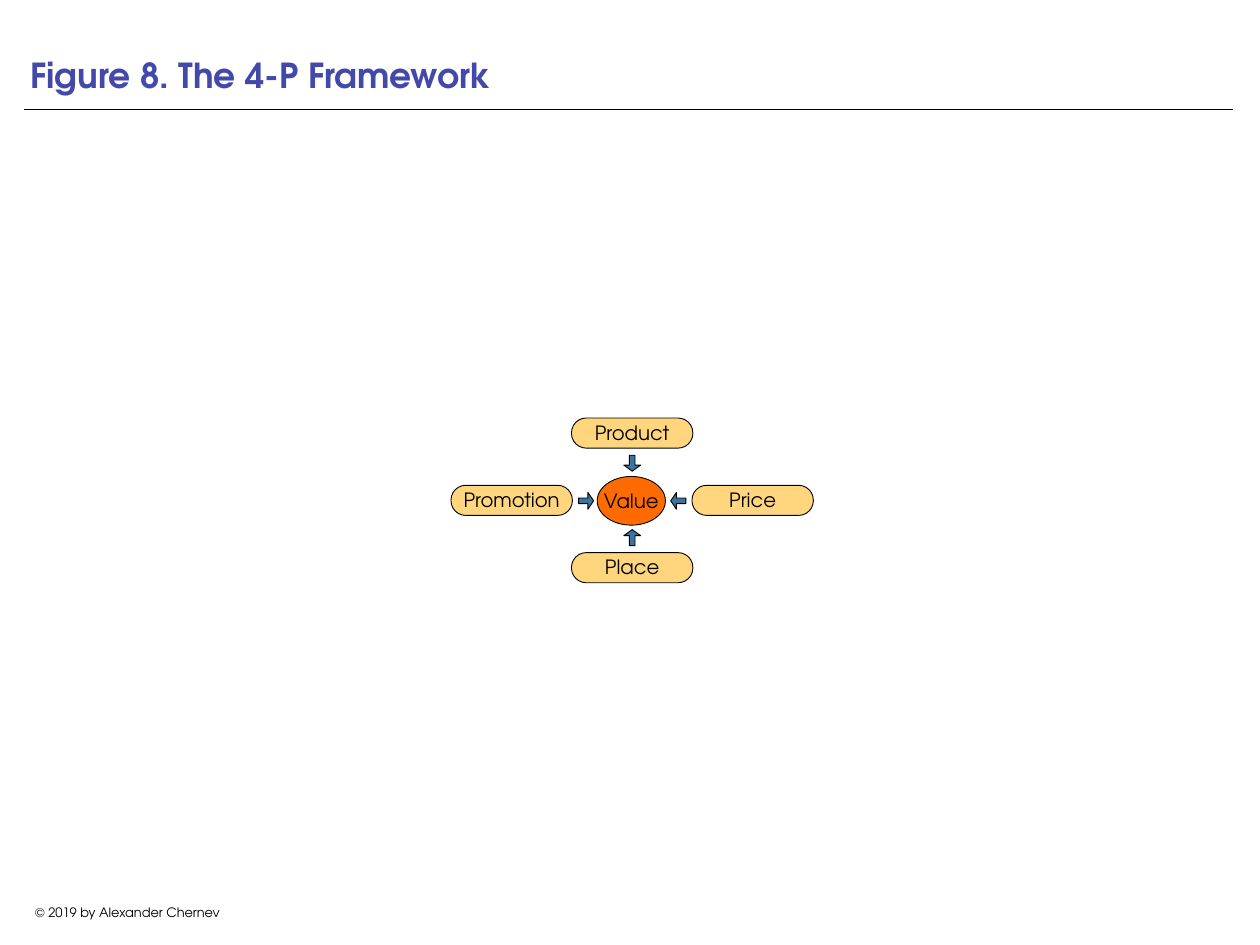
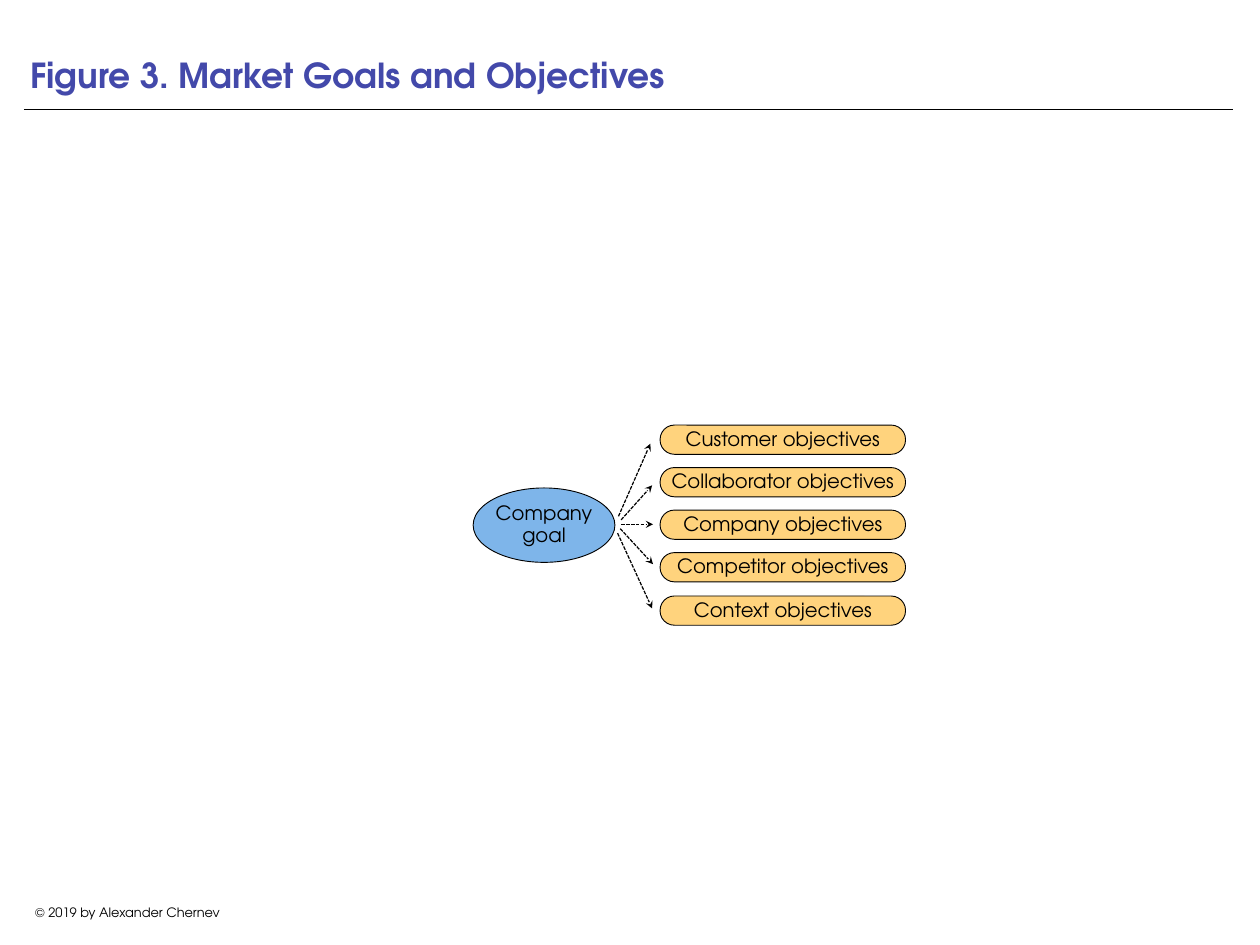
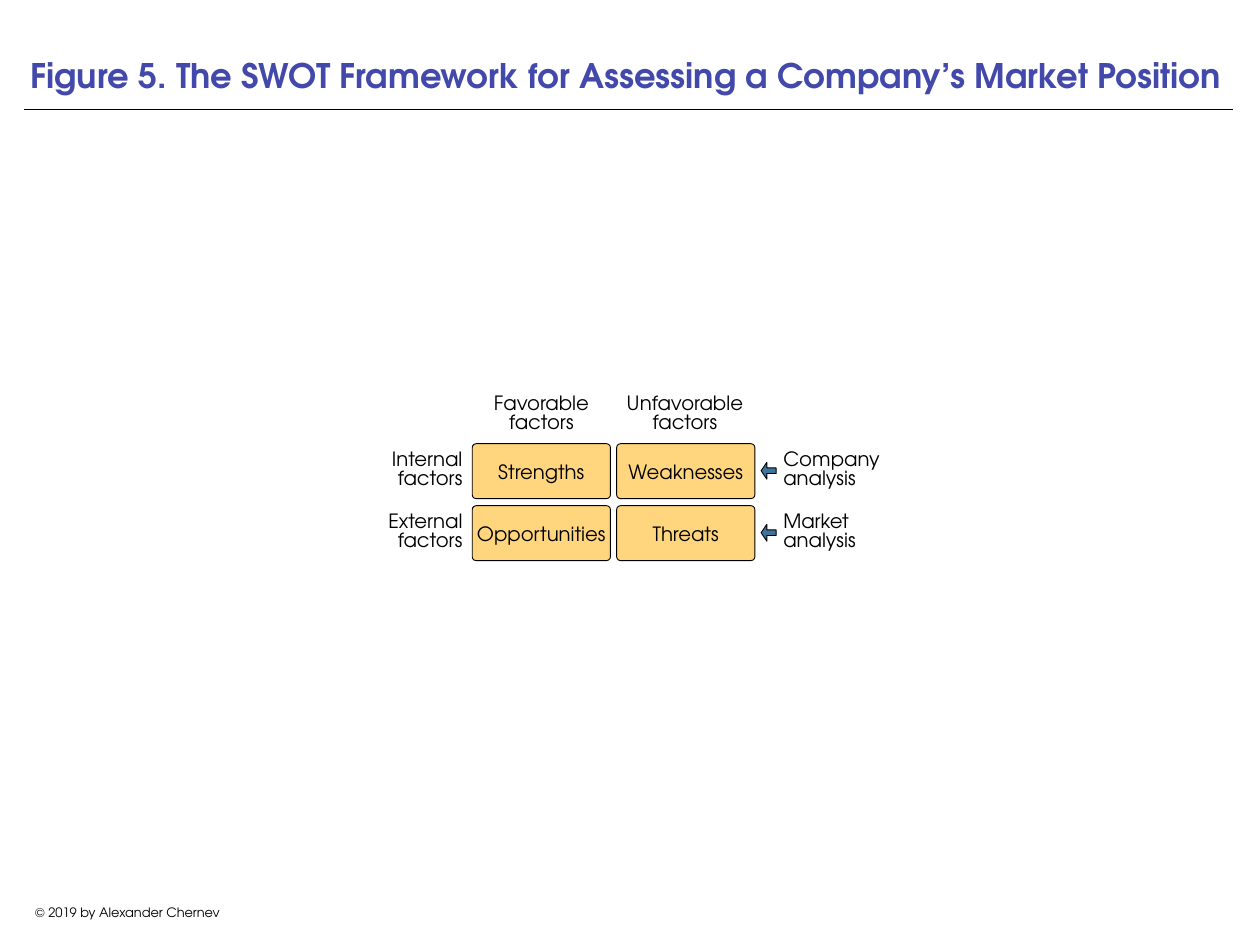
from pptx import Presentation
from pptx.dml.color import RGBColor
from pptx.enum.dml import MSO_LINE
from pptx.enum.shapes import MSO_CONNECTOR, MSO_SHAPE
from pptx.enum.text import MSO_ANCHOR, PP_ALIGN
from pptx.oxml.ns import qn
from pptx.util import Emu, Pt
from lxml.etree import SubElement

PX = 9144  # 100 px to the inch
FONT = "TeX Gyre Adventor"
BLACK, INDIGO, STEEL = "000000", "4349AA", "3D749D"
SAND, AMBER, ORANGE, SKY = "FFD67E", "FFD37D", "FF6B00", "7EB5EA"
VERTICAL_ARROWS = (MSO_SHAPE.UP_ARROW, MSO_SHAPE.DOWN_ARROW)


def px(*lengths):
    return [Emu(length * PX) for length in lengths]


def rgb(color):
    return RGBColor.from_string(color)


def write(shape, text, size=16, color=BLACK, bold=False, align=PP_ALIGN.CENTER,
          anchor=MSO_ANCHOR.MIDDLE, spacing=1.0, insets=(0, 0, 0, 0), wrap=True):
    """Fill a shape with one paragraph; insets run left, top, right, bottom."""
    frame = shape.text_frame
    frame.word_wrap = wrap
    frame.vertical_anchor = anchor
    (frame.margin_left, frame.margin_top,
     frame.margin_right, frame.margin_bottom) = px(*insets)
    paragraph = frame.paragraphs[0]
    paragraph.alignment = align
    paragraph.line_spacing = spacing
    run = paragraph.add_run()
    run.text = text
    run.font.name = FONT
    run.font.size = Pt(size)
    run.font.bold = bold
    run.font.color.rgb = rgb(color)


def add_label(slide, box, text, **text_format):
    write(slide.shapes.add_textbox(*px(*box)), text, **text_format)


def add_figure(slide, kind, box, fill, adjustments=()):
    """Add a filled preset shape with a thin black outline."""
    figure = slide.shapes.add_shape(kind, *px(*box))
    figure.shadow.inherit = False
    figure.fill.solid()
    figure.fill.fore_color.rgb = rgb(fill)
    figure.line.color.rgb = rgb(BLACK)
    figure.line.width = Pt(0.75)
    for index, value in enumerate(adjustments):
        figure.adjustments[index] = value
    return figure


def add_pill(slide, box, text, fill):
    pill = add_figure(slide, MSO_SHAPE.ROUNDED_RECTANGLE, box, fill, [0.49])
    write(pill, text, anchor=MSO_ANCHOR.BOTTOM, spacing=0.8)


def add_block_arrow(slide, kind, center_x, center_y):
    width, height = (19, 18) if kind in VERTICAL_ARROWS else (17, 19)
    box = (center_x - width // 2, center_y - height // 2, width, height)
    add_figure(slide, kind, box, STEEL, [0.33, 0.38])


def add_line(slide, start, end, width):
    connector = slide.shapes.add_connector(MSO_CONNECTOR.STRAIGHT, *px(*start, *end))
    connector.line.color.rgb = rgb(BLACK)
    connector.line.width = Pt(width)
    SubElement(connector._element.spPr, qn("a:effectLst"))
    return connector


def add_dashed_arrow(slide, start, end):
    line = add_line(slide, start, end, 1).line
    line.dash_style = MSO_LINE.SQUARE_DOT
    SubElement(line._get_or_add_ln(), qn("a:tailEnd"), type="stealth")


def add_figure_slide(deck, title, title_size=28, title_width=1364):
    """Add a blank slide with the shared footer, rule and title."""
    slide = deck.slides.add_slide(deck.slide_layouts[6])
    add_label(slide, (27, 1016, 234, 28), "© 2019 by Alexander Chernev",
              size=10.5, anchor=MSO_ANCHOR.TOP, insets=(10, 5, 10, 5), wrap=False)
    add_line(slide, (27, 124), (1392, 124), 0.5)
    add_label(slide, (27, 0, title_width, 115), title, size=title_size, color=INDIGO,
              bold=True, align=PP_ALIGN.LEFT, anchor=MSO_ANCHOR.BOTTOM, insets=(7, 7, 7, 7))
    return slide


def build_four_p(deck):
    slide = add_figure_slide(deck, "Figure 8. The 4-P Framework")
    center_x, center_y = 713, 565
    value = add_figure(slide, MSO_SHAPE.OVAL, (674, 538, 77, 55), ORANGE)
    write(value, "Value", spacing=0.7, insets=(0, 6, 0, 0), wrap=False)
    for name, dx, dy, arrow in (
        ("Product", 0, -1, MSO_SHAPE.DOWN_ARROW),
        ("Price", 1, 0, MSO_SHAPE.LEFT_ARROW),
        ("Place", 0, 1, MSO_SHAPE.UP_ARROW),
        ("Promotion", -1, 0, MSO_SHAPE.RIGHT_ARROW),
    ):
        box = (center_x - 68 + 136 * dx, center_y - 17 + 76 * dy, 137, 34)
        add_pill(slide, box, name, SAND)
        add_block_arrow(slide, arrow, center_x + 52 * dx, center_y + 42 * dy)


def build_goals(deck):
    slide = add_figure_slide(deck, "Figure 3. Market Goals and Objectives")
    goal = add_figure(slide, MSO_SHAPE.OVAL, (534, 551, 160, 84), SKY)
    write(goal, "Company goal", spacing=0.9)
    objectives = (
        ("Customer", (698, 583), (734, 501)),
        ("Collaborator", (701, 587), (736, 548)),
        ("Company", (701, 592), (737, 592)),
        ("Competitor", (700, 597), (737, 637)),
        ("Context", (697, 602), (736, 687)),
    )
    for row, (owner, start, end) in enumerate(objectives):
        add_pill(slide, (745, 480 + 193 * row // 4, 277, 33), f"{owner} objectives", AMBER)
        add_dashed_arrow(slide, start, end)


def build_swot(deck):
    slide = add_figure_slide(
        deck, "Figure 5. The SWOT Framework for Assessing a Company’s Market Position",
        title_size=27.5, title_width=1383)
    insets = (4, 4, 4, 4)
    column_step, row_step = 163, 70
    for column, factor in enumerate(("Favorable", "Unfavorable")):
        add_label(slide, (540 + 162 * column, 439, 142, 58), f"{factor} factors",
                  spacing=0.8, insets=insets)
    rows = (
        ("Internal", ("Strengths", "Weaknesses"), "Company"),
        ("External", ("Opportunities", "Threats"), "Market"),
    )
    for row, (factor, quadrants, analysis) in enumerate(rows):
        drop = row_step * row
        add_label(slide, (420, 502 + drop, 106, 58), f"{factor} factors",
                  align=PP_ALIGN.RIGHT, spacing=0.8, insets=insets)
        for column, name in enumerate(quadrants):
            box = (533 + column_step * column, 501 + drop, 156, 62)
            quadrant = add_figure(slide, MSO_SHAPE.ROUNDED_RECTANGLE, box, SAND, [0.07])
            write(quadrant, name, insets=insets, wrap=False)
        add_block_arrow(slide, MSO_SHAPE.LEFT_ARROW, 867, 531 + drop)
        add_label(slide, (880, 502 + drop, 122, 58), f"{analysis} analysis",
                  align=PP_ALIGN.LEFT, spacing=0.8, insets=insets)


def main():
    deck = Presentation()
    deck.slide_width, deck.slide_height = px(1422, 1067)
    build_four_p(deck)
    build_goals(deck)
    build_swot(deck)
    deck.save("out.pptx")


if __name__ == "__main__":
    main()
